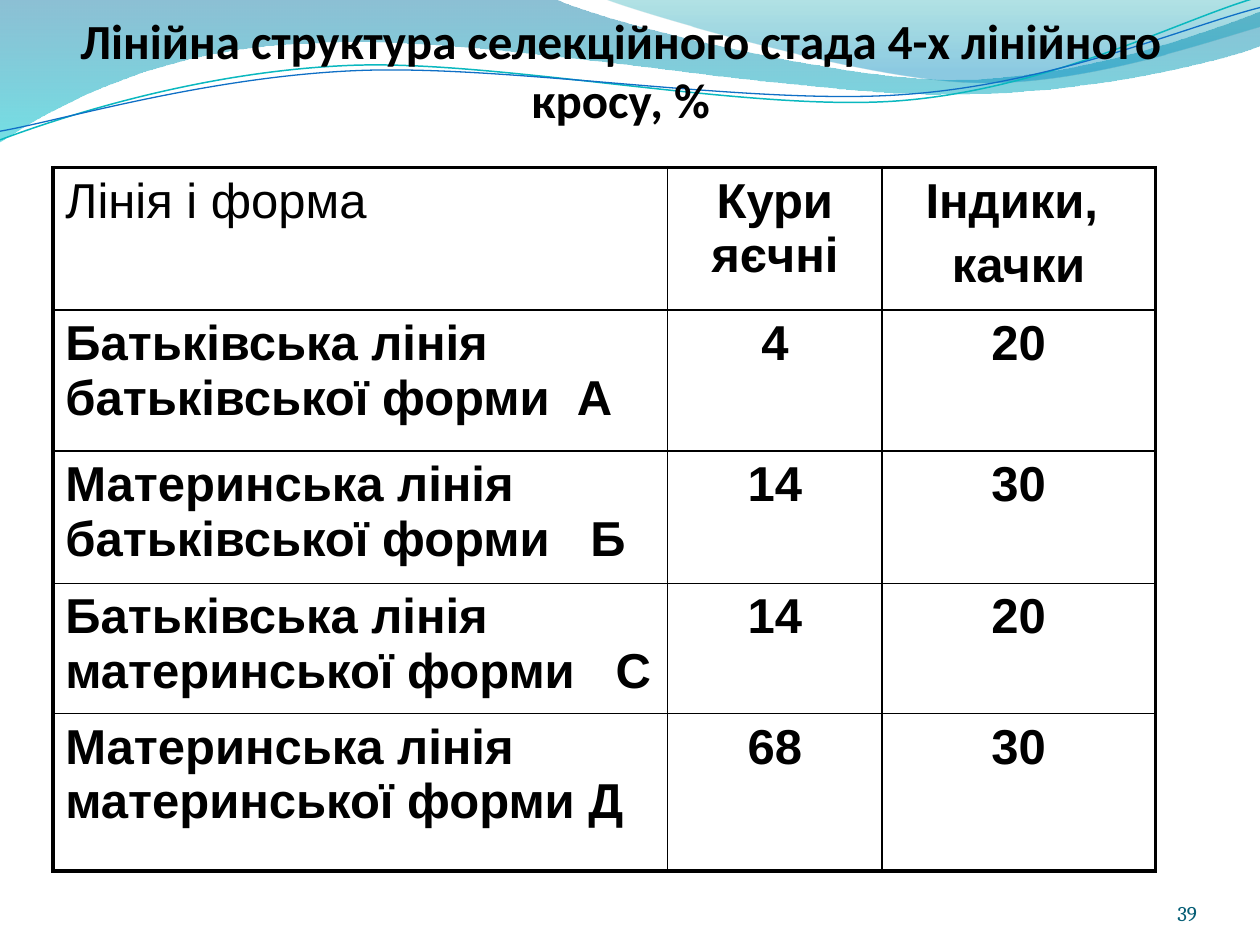
from lxml.etree import SubElement
from pptx import Presentation
from pptx.dml.color import RGBColor
from pptx.enum.text import MSO_ANCHOR, PP_ALIGN
from pptx.oxml.ns import qn
from pptx.util import Pt

COLORS = {
    "text": "000000", "number": "045D75",
    "deep": "0074A1", "aqua": "00C6CF", "teal": "00A1A9", "blue": "008BBF",
    "teal_line": "0AB8BF", "blue_line": "0F6FC6",
}

# Outlines in points: pairs are straight steps, sixes are Bezier curves
BANDS = [
    ([(0, 0), (316.8, -0.7), (342.7, 12.2, 478.1, 45.4, 545.8, 45.4),
      (614.2, 45.4, 689.8, 18.7, 720, 6.5), (720.7, 25.9),
      (707.8, 31.7, 626.4, 54.7, 537.1, 54), (447.8, 54, 275, 20.2, 185, 24.5),
      (92.9, 25.9, 33.1, 59.8, -0.7, 81.4), (0, 0)],
     [(0, "deep", 45), (1, "aqua", 55)]),
    ([(344.9, -0.7), (366.5, 7.9, 491, 44.6, 553.7, 46.8),
      (616.3, 49.7, 691.9, 23, 720, 15.1), (720, 0), (344.9, -0.7)],
     [(0, "teal", 30), (0.8, "blue", 45)]),
]
LINES = [
    ([(-1.4, 63), (33.8, 51.7, 114.1, 29.4, 199.8, 29.9),
      (284.9, 30.3, 425.8, 67.3, 512.4, 64.9),
      (599, 62.4, 676.4, 25.7, 720.2, 15.5)], "teal_line", 0.85),
    ([(-1.1, 58), (32.9, 53.8, 118.3, 32.5, 204.1, 33),
      (290.6, 33.4, 428.9, 63.8, 515.5, 61.4),
      (601.3, 59.6, 678.4, 30.1, 721.4, 21.3)], "blue_line", 0.75),
]
LINE_TILT = 357.3

TITLE = "Лінійна структура селекційного стада 4-х лінійного кросу, %"
ROWS = [
    ("Лінія і форма", "Кури яєчні", "Індики, \nкачки"),
    ("Батьківська лінія батьківської форми  А", "4", "20"),
    ("Материнська лінія батьківської форми   Б", "14", "30"),
    ("Батьківська лінія материнської форми   С", "14", "20"),
    ("Материнська лінія материнської форми Д", "68", "30"),
]
COL_WIDTHS = [351.4, 122.4, 156.2]
ROW_HEIGHTS = [81.4, 80.6, 75.6, 74.2, 90]


def rgb(name):
    return RGBColor.from_string(COLORS[name])


def add_run(p, text, font, color="text"):
    r = p.add_run()
    r.text = text
    for key, value in font.items():
        setattr(r.font, key, value)
    r.font.color.rgb = rgb(color)


def add_text(slide, box, text, font, align, color="text", top=0):
    tf = slide.shapes.add_textbox(*map(Pt, box)).text_frame
    settings = {"word_wrap": True, "vertical_anchor": MSO_ANCHOR.BOTTOM,
                "margin_left": 0, "margin_right": 0,
                "margin_top": Pt(top), "margin_bottom": 0}
    for key, value in settings.items():
        setattr(tf, key, value)
    p = tf.paragraphs[0]
    p.alignment = align
    add_run(p, text, font, color)


def add_outline(slide, left, top, outline, close):
    points = [(Pt(left + x), Pt(top + y)) for part in outline
              for x, y in zip(part[::2], part[1::2])]
    builder = slide.shapes.build_freeform(*points[0])
    builder.add_line_segments(points[1:], close=close)
    s = builder.convert_to_shape()
    s.shadow.inherit = False
    # Join each three steps of a curve into one Bezier segment
    steps = iter(list(s.element.spPr.iter(qn("a:lnTo"))))
    for part in outline[1:]:
        step = next(steps)
        if len(part) == 6:
            curve = step.makeelement(qn("a:cubicBezTo"))
            step.addprevious(curve)
            for node in (step, next(steps), next(steps)):
                curve.append(node[0])
                node.getparent().remove(node)
    return s


def add_waves(slide, left, top):
    # Translucent gradient bands
    for outline, stops in BANDS:
        s = add_outline(slide, left, top, outline, True)
        s.line.fill.background()
        s.fill.gradient()
        s.fill.gradient_angle = 270
        for stop, (position, color, _) in zip(s.fill.gradient_stops, stops):
            stop.position = position
            stop.color.rgb = rgb(color)
        colors = list(s.element.spPr.iter(qn("a:srgbClr")))
        for clr, (_, _, opacity) in zip(colors, stops):
            SubElement(clr, qn("a:alpha"), val=str(opacity * 1000))
    # Thin wavy lines
    for outline, color, width in LINES:
        s = add_outline(slide, left, top, outline, False)
        s.rotation = LINE_TILT
        s.fill.background()
        s.line.color.rgb = rgb(color)
        s.line.width = Pt(width)


def set_borders(cell, widths):
    tcPr = cell._tc.get_or_add_tcPr()
    for side, width in widths.items():
        ln = SubElement(tcPr, qn("a:ln" + side), w=str(Pt(width)))
        fill = SubElement(ln, qn("a:solidFill"))
        SubElement(fill, qn("a:srgbClr"), val=COLORS["text"])


def add_shares_table(slide, left, top):
    n_rows, n_cols = len(ROW_HEIGHTS), len(COL_WIDTHS)
    table = slide.shapes.add_table(
        n_rows, n_cols, Pt(left), Pt(top),
        Pt(sum(COL_WIDTHS)), Pt(sum(ROW_HEIGHTS))).table
    table.first_row = table.horz_banding = False
    for col, width in zip(table.columns, COL_WIDTHS):
        col.width = Pt(width)
    for row, height in zip(table.rows, ROW_HEIGHTS):
        row.height = Pt(height)

    for i, row in enumerate(ROWS):
        for j, text in enumerate(row):
            cell = table.cell(i, j)
            # Heavy frame outside, thin rules inside
            edges = {"L": j == 0, "R": j == n_cols - 1,
                     "T": i == 0, "B": i == n_rows - 1}
            set_borders(cell, {side: 2.25 if outer else 1
                               for side, outer in edges.items()})
            cell.fill.background()
            # All text is bold but the top left cell
            font = {"name": "Arial", "size": Pt(28), "bold": bool(i or j)}
            tf = cell.text_frame
            for k, line in enumerate(text.split("\n")):
                p = tf.add_paragraph() if k else tf.paragraphs[0]
                p.space_before = Pt(5.6)
                p.alignment = PP_ALIGN.CENTER if j else PP_ALIGN.LEFT
                add_run(p, line, font)


def main():
    prs = Presentation()
    prs.slide_width, prs.slide_height = Pt(720), Pt(540)
    slide = prs.slides.add_slide(prs.slide_layouts[6])
    add_waves(slide, 0, 0)
    add_text(slide, (39.6, -22.3, 630, 95.8), TITLE,
             {"name": "Calibri", "size": Pt(28), "bold": True},
             PP_ALIGN.CENTER, top=3.6)
    add_shares_table(slide, 30.2, 95.8)
    add_text(slide, (624.2, 500.4, 59.8, 28.8), "39",
             {"name": "Cambria", "size": Pt(12)}, PP_ALIGN.RIGHT, "number")
    prs.save("out.pptx")


if __name__ == "__main__":
    main()
